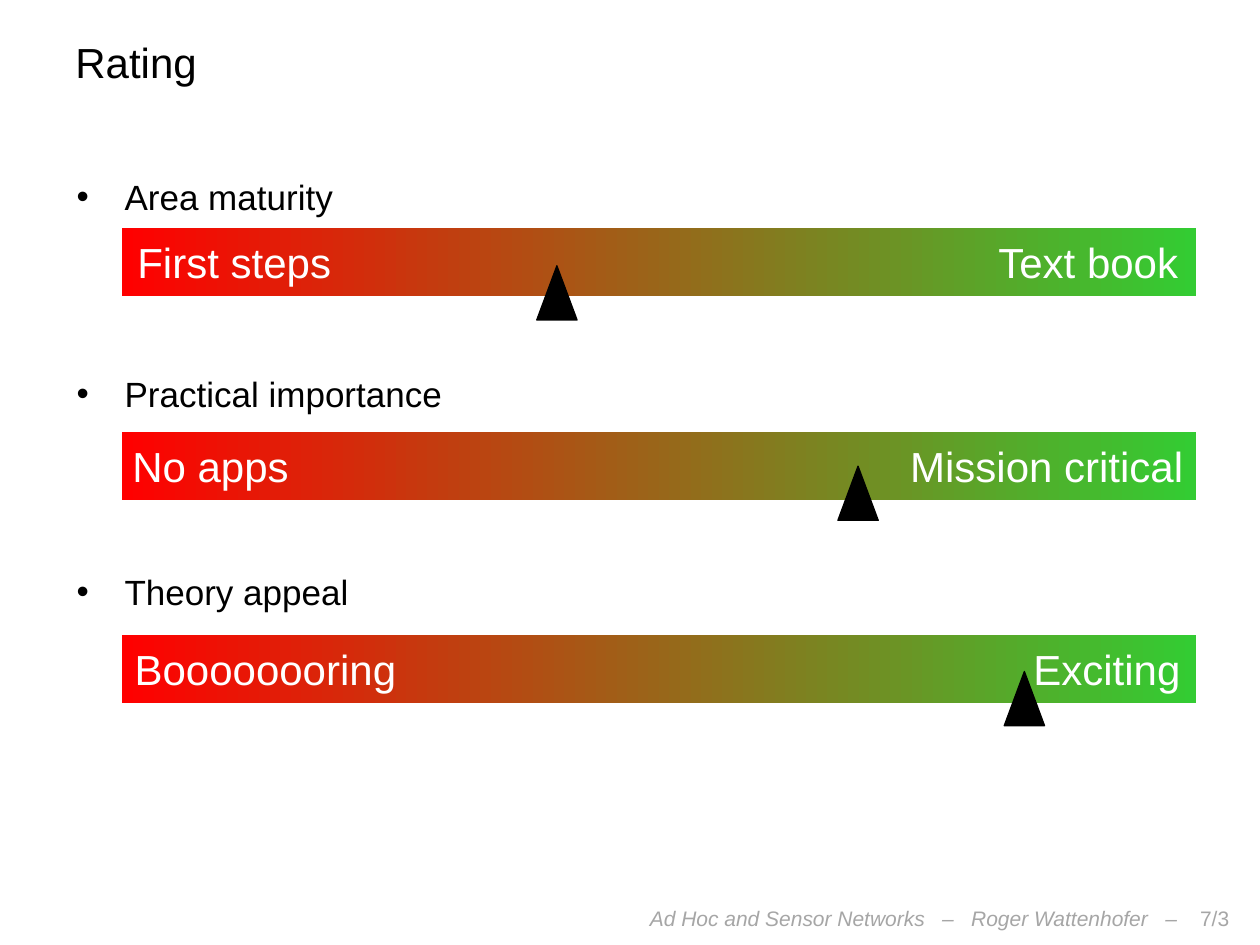
from lxml import etree
from pptx import Presentation
from pptx.dml.color import RGBColor
from pptx.enum.shapes import MSO_SHAPE
from pptx.enum.text import MSO_ANCHOR, PP_ALIGN
from pptx.oxml.ns import qn
from pptx.util import Inches, Pt

RECT = MSO_SHAPE.RECTANGLE
TRIANGLE = MSO_SHAPE.ISOSCELES_TRIANGLE
MIDDLE = MSO_ANCHOR.MIDDLE
LEFT, CENTER = PP_ALIGN.LEFT, PP_ALIGN.CENTER
color = RGBColor.from_string


def write(shape, text, size, tint, align=LEFT, italic=False):
    frame = shape.text_frame
    frame.word_wrap = True
    frame.text = text
    for para in frame.paragraphs:
        para.alignment = align
        for run in para.runs:
            font = run.font
            font.name, font.size, font.italic = "Arial", Pt(size), italic
            font.color.rgb = color(tint)
    return frame


def add_tabs(para, stops):
    tabs = etree.SubElement(para._p.get_or_add_pPr(), qn("a:tabLst"))
    for pos, side in stops:
        etree.SubElement(tabs, qn("a:tab"), pos=str(Inches(pos)), algn=side)


deck = Presentation()
deck.slide_width, deck.slide_height = Inches(10), Inches(7.5)
slide = deck.slides.add_slide(deck.slide_layouts[6])
shapes = slide.shapes

page = shapes.add_textbox(Inches(9.28), Inches(7.14), Inches(0.72), Inches(0.35))
write(page, "7/3", 12, "A6A6A6", CENTER)
footer = shapes.add_textbox(Inches(5.06), Inches(7.14), Inches(4.5), Inches(0.36))
frame = write(footer, "Ad Hoc and Sensor Networks\t–\tRoger Wattenhofer\t–", 12, "A6A6A6", italic=True)
add_tabs(frame.paragraphs[0], [(2.32, "l"), (2.55, "l"), (4.09, "l")])

title = shapes.add_textbox(Inches(0.5), Inches(0.22), Inches(9), Inches(0.54))
write(title, "Rating", 24, "000000").vertical_anchor = MIDDLE

body = shapes.add_textbox(Inches(0.51), Inches(1.34), Inches(8.98), Inches(5.41))
frame = write(body, "Area maturity\nPractical importance\nTheory appeal", 20, "000000")
for row, para in enumerate(frame.paragraphs):
    props = para._p.get_or_add_pPr()
    props.set("marL", str(Inches(0.38)))
    props.set("indent", str(-Inches(0.38)))
    etree.SubElement(props, qn("a:buFont"), typeface="Arial")
    etree.SubElement(props, qn("a:buChar"), char="•")
    if row:
        para.space_before = Pt(89)

scales = [
    ("First steps", "Text book", 0.12, 4.26, 2.11),
    ("No apps", "Mission critical", 0.08, 6.65, 3.7),
    ("Boooooooring", "Exciting", 0.1, 7.97, 5.33),
]
width = 8.52
for row, (low, high, inset, left, top) in enumerate(scales):
    bar = shapes.add_shape(RECT, Inches(0.97), Inches(1.81 + 1.615 * row), Inches(width), Inches(0.54))
    bar.shadow.inherit = False
    bar.line.fill.background()
    bar.fill.gradient()
    bar.fill.gradient_angle = 0
    for stop, tint, pos in zip(bar.fill.gradient_stops, ("FF0000", "33CC33"), (0, 1)):
        stop.color.rgb = color(tint)
        stop.position = pos
    frame = write(bar, f"{low}\t{high}", 24, "FFFFFF")
    frame.vertical_anchor = MIDDLE
    frame.margin_left = frame.margin_right = Inches(inset)
    add_tabs(frame.paragraphs[0], [(width - 2 * inset - 0.02, "r")])

for low, high, inset, left, top in scales:
    mark = shapes.add_shape(TRIANGLE, Inches(left), Inches(top), Inches(0.32), Inches(0.43))
    mark.shadow.inherit = False
    mark.fill.solid()
    mark.fill.fore_color.rgb = color("000000")
    mark.line.color.rgb = color("000000")
    mark.line.width = Pt(0.75)

deck.save("out.pptx")
